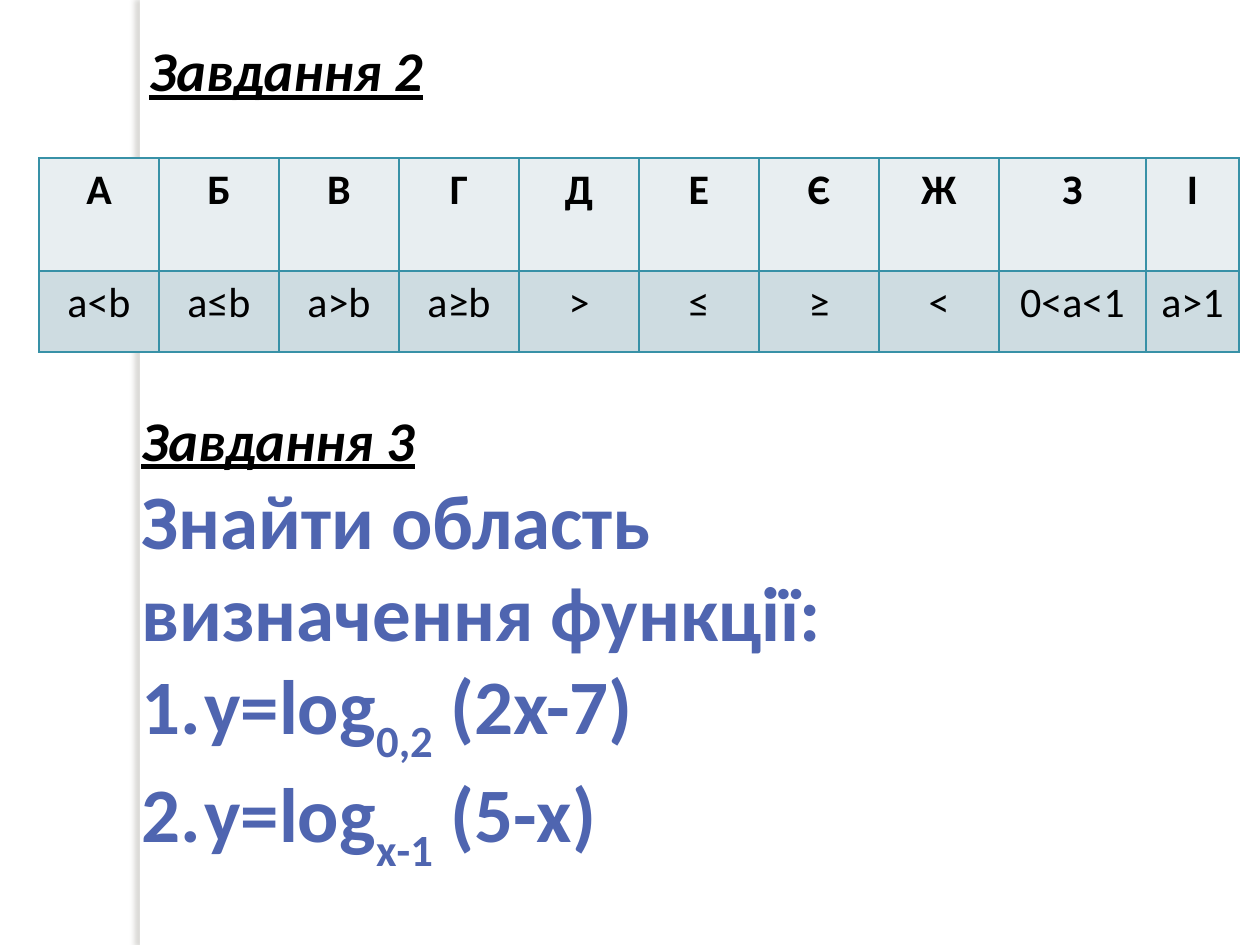
"""Build a slide with an answer table and two logarithm tasks."""
from lxml.etree import SubElement
from pptx import Presentation
from pptx.dml.color import RGBColor
from pptx.enum.shapes import MSO_SHAPE
from pptx.enum.text import MSO_ANCHOR, PP_ALIGN
from pptx.oxml import parse_xml
from pptx.oxml.ns import qn
from pptx.util import Pt

BLACK = RGBColor(0, 0, 0)
WHITE = RGBColor(255, 255, 255)
BLUE = RGBColor(0x4F, 0x65, 0xB0)
TEAL = RGBColor(0x38, 0x91, 0xA7)
FILLS = [RGBColor(0xE8, 0xEE, 0xF1), RGBColor(0xCE, 0xDC, 0xE1)]
NS = "http://schemas.openxmlformats.org/drawingml/2006/main"

ROWS = [
    ["А", "Б", "В", "Г", "Д", "Е", "Є", "Ж", "З", "І"],
    ["a<b", "a≤b", "a>b", "a≥b", ">", "≤", "≥", "<", "0<a<1", "a>1"],
]
WIDTHS = [120] * 8 + [147, 93]
HEIGHTS = [113, 81]
HEADS = ["Завдання 2", "Завдання 3"]
GOAL = "Знайти область визначення функції:"
TASKS = [("y=log", "0,2", " (2x-7)"), ("y=log", "х-1", " (5-x)")]
HEAD = dict(size=32, bold=True, italic=True, line=True)
BODY = dict(size=44, bold=True, color=BLUE)


def px(num):
    return round(num * 914400 / 126)


def write(para, text, size=24, color=BLACK, bold=False, italic=False, line=False, base=0):
    run = para.add_run()
    run.text = text
    font = run.font
    font.name, font.size, font.color.rgb = "Calibri", Pt(size), color
    font.bold, font.italic, font.underline = bold, italic, line
    if base:
        font._element.set("baseline", str(base * 1000))


def add_box(slide, left, top, width, height, wrap):
    box = slide.shapes.add_textbox(px(left), px(top), px(width), px(height))
    frame = box.text_frame
    frame.word_wrap = wrap
    frame.vertical_anchor = MSO_ANCHOR.MIDDLE
    return frame


def number(para):
    props = para._p.get_or_add_pPr()
    props.set("marL", str(px(63)))
    props.set("indent", str(-px(63)))
    SubElement(props, qn("a:buFont"), typeface="+mj-lt")
    SubElement(props, qn("a:buAutoNum"), type="arabicPeriod")


def border(cell):
    props = cell._tc.get_or_add_tcPr()
    for spot, side in enumerate("LRTB"):
        props.insert(spot, parse_xml(
            f'<a:ln{side} xmlns:a="{NS}" w="{Pt(1)}"><a:solidFill>'
            f'<a:srgbClr val="{TEAL}"/></a:solidFill></a:ln{side}>'))


def add_strip(slide):
    strip = slide.shapes.add_shape(MSO_SHAPE.RECTANGLE, px(140), 0, px(10), px(945))
    strip.fill.solid()
    strip.fill.fore_color.rgb = WHITE
    strip.line.fill.background()
    strip._element.spPr.append(parse_xml(
        f'<a:effectLst xmlns:a="{NS}"><a:outerShdw blurRad="{Pt(3)}" dist="{Pt(3)}" '
        f'dir="10800000" algn="tl" rotWithShape="0"><a:srgbClr val="736F63">'
        f'<a:alpha val="25000"/></a:srgbClr></a:outerShdw></a:effectLst>'))


def add_grid(slide):
    table = slide.shapes.add_table(
        len(ROWS), len(WIDTHS), px(39), px(158), px(sum(WIDTHS)), px(sum(HEIGHTS))).table
    for col, width in zip(table.columns, WIDTHS):
        col.width = px(width)
    for row, high, words, fill in zip(table.rows, HEIGHTS, ROWS, FILLS):
        row.height = px(high)
        for cell, word in zip(row.cells, words):
            cell.fill.solid()
            cell.fill.fore_color.rgb = fill
            border(cell)
            para = cell.text_frame.paragraphs[0]
            para.alignment = PP_ALIGN.CENTER
            write(para, word, bold=words is ROWS[0])


def main():
    deck = Presentation()
    deck.slide_width, deck.slide_height = px(1260), px(945)
    slide = deck.slides.add_slide(deck.slide_layouts[6])
    add_strip(slide)
    frame = add_box(slide, 129, 413, 906, 454, True)
    write(frame.paragraphs[0], HEADS[1], **HEAD)
    write(frame.add_paragraph(), GOAL, **BODY)
    for func, low, rest in TASKS:
        para = frame.add_paragraph()
        number(para)
        write(para, func, **BODY)
        write(para, low, base=-30, **BODY)
        write(para, rest, **BODY)
    add_grid(slide)
    title = add_box(slide, 137, 29, 301, 81, False)
    write(title.paragraphs[0], HEADS[0], **HEAD)
    deck.save("out.pptx")


if __name__ == "__main__":
    main()
